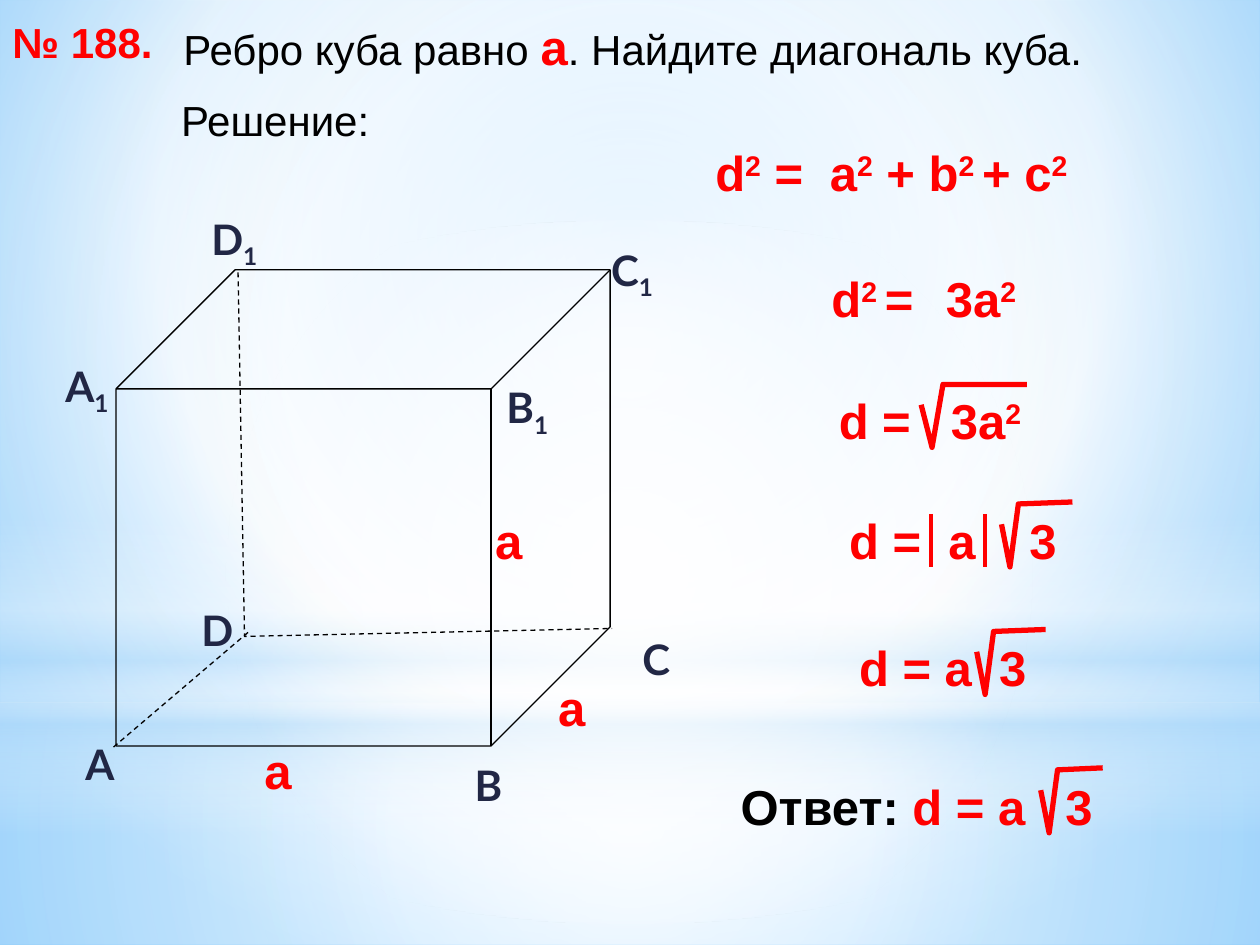
"""Builds the slide that solves problem 188, the diagonal of a cube."""
from dataclasses import dataclass

from lxml import etree
from pptx import Presentation
from pptx import util as u
from pptx.dml.color import RGBColor
from pptx.enum import dml, shapes, text
from pptx.oxml import ns

RED = RGBColor(0xFF, 0x00, 0x00)
BLACK = RGBColor(0x00, 0x00, 0x00)
NAVY = RGBColor(0x21, 0x27, 0x45)
WHITE = RGBColor(0xFF, 0xFF, 0xFF)
PALE = RGBColor(0xB4, 0xDC, 0xFA)
SKY = RGBColor(0x9E, 0xD5, 0xFF)
DEEP = RGBColor(0x5B, 0xB9, 0xFF)

WIDTH, HEIGHT = 25.4, 19.05
HORIZON = 14.17
CENTER = (50, 50, 50, 50)


@dataclass(frozen=True)
class Stop:
    position: int
    color: RGBColor
    opacity: int = 100


@dataclass(frozen=True)
class Layer:
    geometry: shapes.MSO_SHAPE
    top: float
    height: float
    stops: tuple
    focus: tuple | None = CENTER


@dataclass(frozen=True)
class Run:
    words: str
    raised: int = 0
    color: RGBColor | None = None
    size: int | None = None
    bold: bool | None = None


@dataclass(frozen=True)
class Formula:
    left: float
    top: float
    width: float
    runs: tuple
    tabs: tuple = ()


@dataclass(frozen=True)
class Radical:
    left: float
    top: float
    width: float
    rise: float = 0.04
    hook: float = 0.17


@dataclass(frozen=True)
class Vertex:
    left: float
    top: float
    letter: str
    index: str = ""


SQUARE = Run("2", 30)
ROOT_OF_3 = Run("3")

LAYERS = (
    Layer(shapes.MSO_SHAPE.RECTANGLE, HORIZON, HEIGHT - HORIZON,
          (Stop(0, WHITE, 91), Stop(37, WHITE, 76), Stop(100, PALE, 79))),
    Layer(shapes.MSO_SHAPE.RECTANGLE, 0, HORIZON,
          (Stop(0, WHITE, 89), Stop(48, WHITE, 62), Stop(100, PALE, 79))),
    Layer(shapes.MSO_SHAPE.RECTANGLE, 10.46, 6.35,
          (Stop(0, WHITE, 0), Stop(29, WHITE, 30), Stop(45, PALE, 40),
           Stop(55, WHITE, 26), Stop(65, PALE, 60), Stop(100, WHITE, 0)), None),
    Layer(shapes.MSO_SHAPE.OVAL, 4.45, HORIZON, (Stop(0, WHITE), Stop(56, WHITE, 0))),
)
FORMULAS = (
    Formula(14.17, 2.74, 8.46, (Run("d"), SQUARE, Run(" =\ta"), SQUARE, Run(" + b"),
                                Run("2 ", 30), Run("+ с"), SQUARE), (2.31,)),
    Formula(16.51, 5.28, 6.78, (Run("d"), Run("2 ", 30), Run("=\t3a"), SQUARE), (2.31,)),
    Formula(16.66, 7.75, 4.45, (Run("d =\t3a"), SQUARE), (2.26,)),
    Formula(16.87, 10.16, 6.99, (Run("d =\ta\t"), ROOT_OF_3), (2.0, 3.63)),
    Formula(17.07, 12.73, 4.24, (Run("d = a\t"), ROOT_OF_3), (2.82,)),
    Formula(14.68, 15.52, 9.32,
            (Run("Ответ: ", color=BLACK), Run("d = a\t"), ROOT_OF_3), (6.55,)),
)
RADICALS = (
    Radical(18.57, 7.75, 2.13, rise=0, hook=0.22),
    Radical(20.19, 10.16, 1.43),
    Radical(19.69, 12.73, 1.39),
    Radical(20.98, 15.52, 1.25),
)
MODULUS_BARS = (18.77, 19.86)
HIDDEN_EDGES = (
    ((4.8, 5.49), (4.93, 12.83), (12.34, 12.67)),
    ((5.0, 12.75), (2.29, 15.06)),
)
VERTICES = (
    Vertex(3.81, 12.07, "D"), Vertex(1.47, 14.76, "А"),
    Vertex(9.32, 15.19, "В"), Vertex(12.7, 12.65, "С"),
    Vertex(1.07, 7.14, "А", "1"), Vertex(4.01, 4.17, "D", "1"),
    Vertex(12.07, 4.8, "С", "1"), Vertex(9.96, 7.57, "В", "1"),
)
EDGE_LENGTHS = ((5.08, 14.81), (9.73, 10.16), (11.0, 13.54))


def set_gradient(owner, stops: tuple, focus: tuple | None) -> None:
    """Replace the solid fill inside an element with a gradient."""
    solid = owner.find(".//" + ns.qn("a:solidFill"))
    gradient = etree.Element(ns.qn("a:gradFill"), rotWithShape="1")
    stop_list = etree.SubElement(gradient, ns.qn("a:gsLst"))
    for stop in stops:
        mark = etree.SubElement(stop_list, ns.qn("a:gs"), pos=str(stop.position * 1000))
        color = etree.SubElement(mark, ns.qn("a:srgbClr"), val=str(stop.color))
        if stop.opacity < 100:
            etree.SubElement(color, ns.qn("a:alpha"), val=str(stop.opacity * 1000))
    if focus:
        course = etree.SubElement(gradient, ns.qn("a:path"), path="circle")
        sides = {side: str(share * 1000) for side, share in zip("ltrb", focus)}
        etree.SubElement(course, ns.qn("a:fillToRect"), sides)
    else:
        etree.SubElement(gradient, ns.qn("a:lin"), ang="5400000", scaled="0")
    solid.getparent().replace(solid, gradient)


def add_layer(slide, layer: Layer) -> None:
    """Draw one translucent sheet of the backdrop."""
    sheet = slide.shapes.add_shape(layer.geometry, 0, u.Cm(layer.top),
                                   u.Cm(WIDTH), u.Cm(layer.height))
    sheet.shadow.inherit = False
    sheet.line.fill.background()
    sheet.fill.solid()
    set_gradient(sheet._element, layer.stops, layer.focus)


def add_text(slide, left: float, top: float, width: float, height: float, runs: tuple, *,
             font: str = "Arial", size: int = 28, color: RGBColor = RED,
             bold: bool = True, wrap: bool = True, tabs: tuple = ()) -> None:
    """Write one line of formatted runs."""
    frame = slide.shapes.add_textbox(*map(u.Cm, (left, top, width, height))).text_frame
    frame.word_wrap = wrap
    frame.auto_size = text.MSO_AUTO_SIZE.SHAPE_TO_FIT_TEXT
    line = frame.paragraphs[0]
    if tabs:
        tab_list = etree.SubElement(line._p.get_or_add_pPr(), ns.qn("a:tabLst"))
        for tab in tabs:
            etree.SubElement(tab_list, ns.qn("a:tab"), pos=str(int(u.Cm(tab))), algn="l")
    for part in runs:
        run = line.add_run()
        run.text = part.words
        run.font.name = font
        run.font.size = u.Pt(part.size or size)
        run.font.bold = bold if part.bold is None else part.bold
        run.font.color.rgb = part.color or color
        if part.raised:
            run.font._element.set("baseline", str(part.raised * 1000))


def add_polyline(slide, points: tuple, color: RGBColor, weight: float,
                 dash: dml.MSO_LINE | None = None) -> None:
    """Draw an open line through the points."""
    start, *rest = [(u.Cm(x), u.Cm(y)) for x, y in points]
    builder = slide.shapes.build_freeform(*start)
    builder.add_line_segments(rest, close=False)
    outline = builder.convert_to_shape()
    outline.shadow.inherit = False
    outline.fill.background()
    outline.line.color.rgb = color
    outline.line.width = u.Pt(weight)
    outline.line.dash_style = dash


def add_radical(slide, root: Radical) -> None:
    """Draw a root sign with its bar."""
    x, y = root.left, root.top
    add_polyline(slide, ((x, y + 0.41), (x + root.hook, y + 1.27), (x + 2 * root.hook, y),
                         (x + root.width, y - root.rise)), RED, 3)


def add_modulus_bar(slide, x: float) -> None:
    """Draw one upright bar of the absolute value."""
    bar = slide.shapes.add_connector(shapes.MSO_CONNECTOR.STRAIGHT,
                                     *map(u.Cm, (x, 10.36, x, 11.43)))
    bar.line.color.rgb = RED
    bar.line.width = u.Pt(2.25)
    etree.SubElement(bar._element.spPr, ns.qn("a:effectLst"))


def add_cube(slide) -> None:
    """Draw the cube with hidden edges, vertex letters and edge lengths."""
    for edge in HIDDEN_EDGES:
        add_polyline(slide, edge, BLACK, 0.75, dml.MSO_LINE.DASH)
    cube = slide.shapes.add_shape(shapes.MSO_SHAPE.CUBE, *map(u.Cm, (2.34, 5.44, 9.96, 9.6)))
    cube.shadow.inherit = False
    cube.fill.background()
    cube.line.color.rgb = BLACK
    cube.line.width = u.Pt(0.75)
    for vertex in VERTICES:
        runs = (Run(vertex.letter),) + ((Run(vertex.index, -25),) if vertex.index else ())
        add_text(slide, vertex.left, vertex.top, 1.7, 1.27, runs,
                 font="Lato", size=24, color=NAVY)
    for left, top in EDGE_LENGTHS:
        add_text(slide, left, top, 1.07, 1.45, (Run("а"),), wrap=False)


def main() -> None:
    """Build and save the slide."""
    deck = Presentation()
    deck.slide_width, deck.slide_height = u.Cm(WIDTH), u.Cm(HEIGHT)
    slide = deck.slides.add_slide(deck.slide_layouts[6])
    slide.background.fill.solid()
    set_gradient(slide._element, (Stop(0, SKY), Stop(60, WHITE), Stop(100, DEEP)),
                 (20, 10, 20, 60))
    for layer in LAYERS:
        add_layer(slide, layer)
    problem = (Run("Ребро куба равно "), Run("а", color=RED, size=28, bold=True),
               Run(". Найдите диагональ куба."))
    add_text(slide, 3.45, 0.2, 21.9, 1.45, problem, size=24, color=BLACK, bold=False)
    add_text(slide, 0, 0.2, 3.33, 1.27, (Run("№ 188."),), size=24, wrap=False)
    add_text(slide, 3.4, 1.78, 4.7, 1.27, (Run("Решение:"),), size=24, color=BLACK, bold=False)
    for formula in FORMULAS:
        add_text(slide, formula.left, formula.top, formula.width, 1.45,
                 formula.runs, tabs=formula.tabs)
    for root in RADICALS:
        add_radical(slide, root)
    for x in MODULUS_BARS:
        add_modulus_bar(slide, x)
    add_cube(slide)
    deck.save("out.pptx")


if __name__ == "__main__":
    main()
